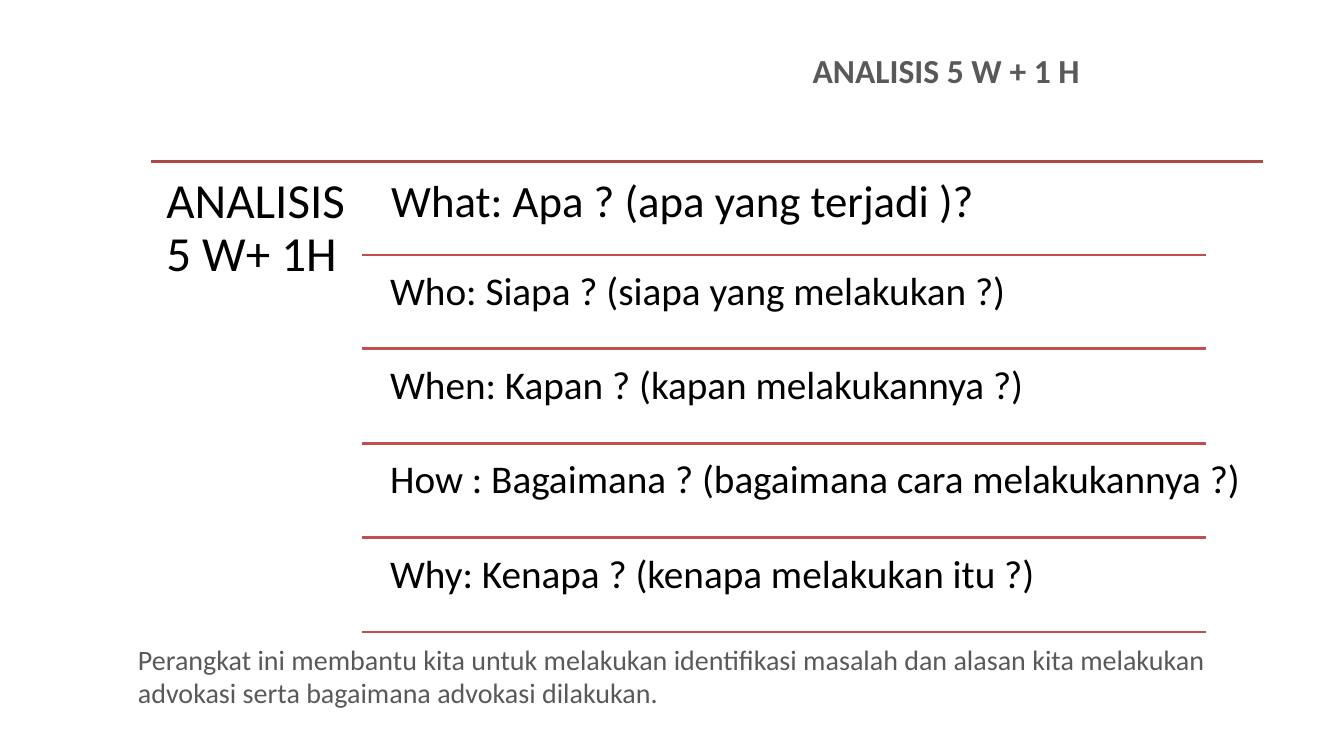
from lxml import etree
from pptx import Presentation
from pptx import util as u
from pptx.dml.color import RGBColor
from pptx.enum import shapes, text
from pptx.oxml.ns import qn

PX = 9144  # one hundred px to the inch
COLORS = {"heading": "595959", "body": "000000", "top_rule": "AE4946", "rule": "C0504D"}

deck = Presentation()
deck.slide_width, deck.slide_height = 1333 * PX, 750 * PX
page = deck.slides.add_slide(deck.slide_layouts[5])


def write(box, place, words, size, color, inset=(10, 5), spacing=1.0, bold=False):
    box.left, box.top, box.width, box.height = [n * PX for n in place]
    frame = box.text_frame
    frame.text = words
    frame.word_wrap = True
    frame.auto_size = text.MSO_AUTO_SIZE.NONE
    frame.vertical_anchor = text.MSO_ANCHOR.TOP
    frame.margin_left = frame.margin_right = inset[0] * PX
    frame.margin_top = frame.margin_bottom = inset[1] * PX
    para = frame.paragraphs[0]
    para.alignment = text.PP_ALIGN.LEFT
    para.line_spacing = spacing
    font = para.runs[0].font
    font.name, font.size, font.bold = "Calibri", u.Pt(size), bold
    font.color.rgb = RGBColor.from_string(COLORS[color])


def draw_rule(left, right, y, color):
    rule = page.shapes.add_connector(
        shapes.MSO_CONNECTOR.STRAIGHT, left * PX, y * PX, right * PX, y * PX)
    rule.line.color.rgb = RGBColor.from_string(COLORS[color])
    rule.line.width = u.Pt(2)
    etree.SubElement(rule.element.spPr, qn("a:effectLst"))


# Title
write(page.shapes.title, (796, 44, 371, 47), "ANALISIS 5 W + 1 H", 24, "heading", bold=True)

# Heading column under the top rule
draw_rule(150, 1253, 160, "top_rule")
label = page.shapes.add_textbox(0, 0, 0, 0)
write(label, (150, 160, 209, 472), "ANALISIS 5 W+ 1H", 35, "body", (15, 15), 0.9)

# Questions, each closed by a rule
questions = [
    ("What: Apa ? (apa yang terjadi )?", 32, 821, 13),
    ("Who: Siapa ? (siapa yang melakukan ?)", 28, 877, 12),
    ("When: Kapan ? (kapan melakukannya ?)", 28, 877, 12),
    ("How : Bagaimana ? (bagaimana cara melakukannya ?)", 28, 877, 12),
    ("Why: Kenapa ? (kenapa melakukan itu ?)", 28, 877, 12),
]
for row, (question, size, width, inset) in enumerate(questions):
    top = 164 + row * 187 // 2
    box = page.shapes.add_textbox(0, 0, 0, 0)
    write(box, (375, top, width, 89), question, size, "body", (inset, inset), 0.9)
    draw_rule(359, 1196, top + 89, "rule")

# Closing remark
remark = page.shapes.add_textbox(0, 0, 0, 0)
write(remark, (127, 632, 1126, 87),
      "Perangkat ini membantu kita untuk melakukan identifikasi masalah dan alasan "
      "kita melakukan advokasi serta bagaimana advokasi dilakukan.", 20, "heading")

deck.save("out.pptx")
